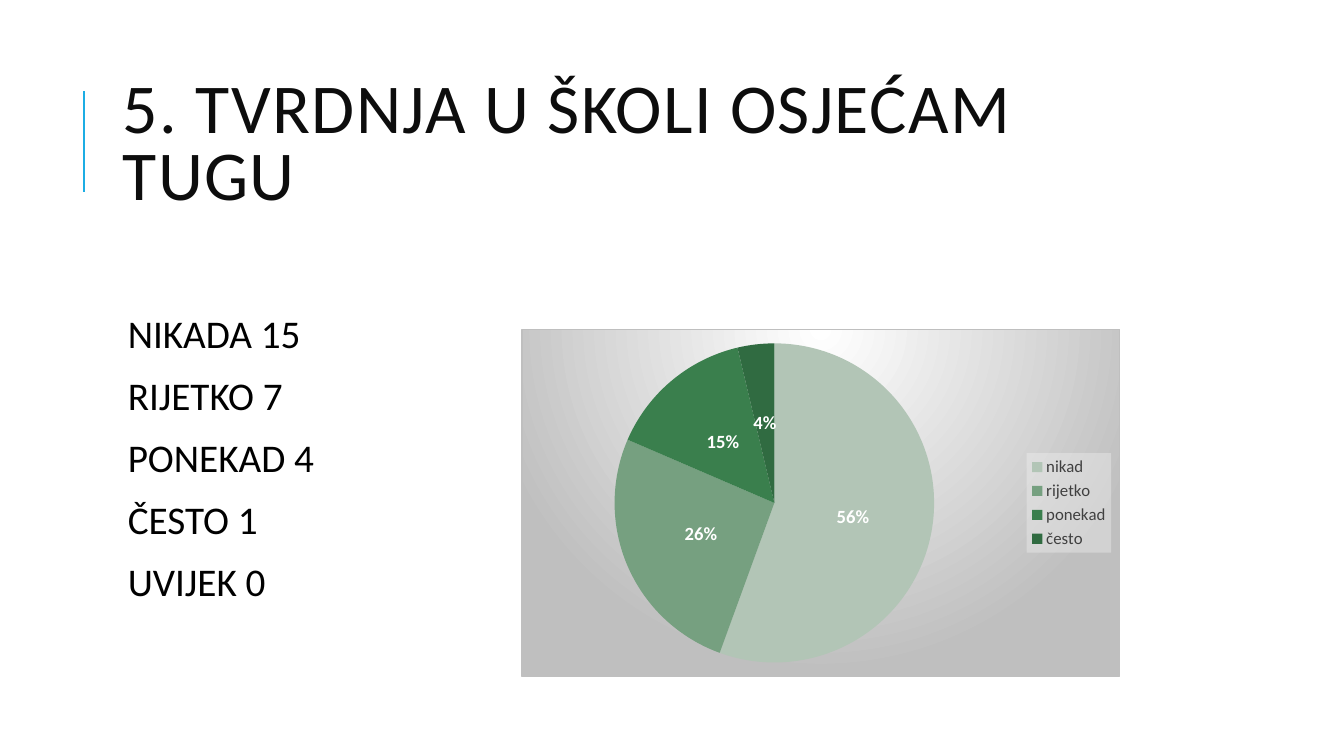
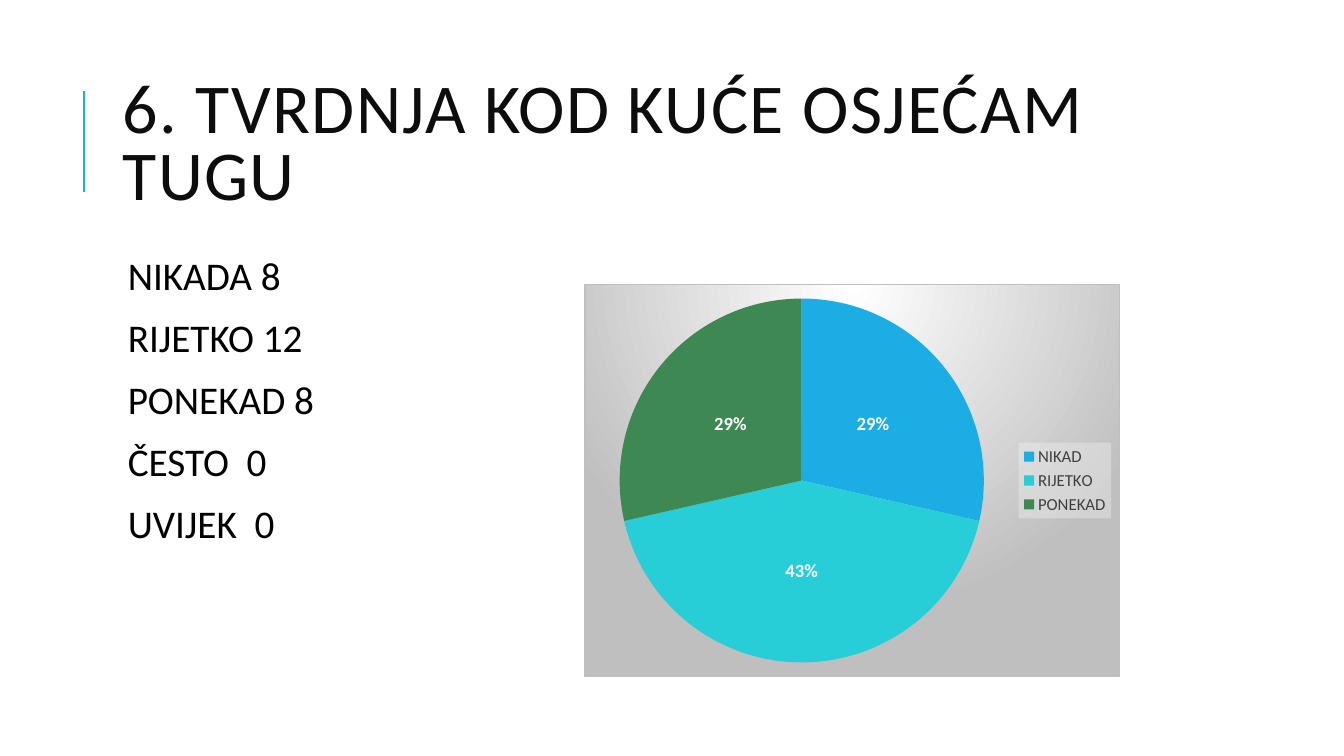
from lxml.etree import SubElement
from pptx import Presentation
from pptx.chart.data import CategoryChartData
from pptx.dml.color import RGBColor
from pptx.enum.chart import XL_CHART_TYPE, XL_LABEL_POSITION, XL_LEGEND_POSITION
from pptx.enum.shapes import MSO_CONNECTOR
from pptx.enum.text import MSO_ANCHOR, MSO_AUTO_SIZE, PP_ALIGN
from pptx.oxml import parse_xml
from pptx.oxml.ns import nsdecls, qn
from pptx.util import Pt

FONT = "Calibri"
ACCENT = "1CADE4"
TITLE_COLOR = "0D0D0D"
TEXT_COLOR = "000000"
LEGEND_COLOR = "404040"
LABEL_COLOR = "FFFFFF"
TITLE_BOX = (80.5, 46, 765.5, 118)
RULE_X, RULE_TOP, RULE_BOTTOM = 60, 65, 137

CHART_BACKGROUND = """<a:gradFill><a:gsLst>
<a:gs pos="0"><a:srgbClr val="FFFFFF"/></a:gs>
<a:gs pos="100000"><a:srgbClr val="BFBFBF"/></a:gs></a:gsLst>
<a:path path="circle"><a:fillToRect l="50000" t="0" r="50000" b="100000"/></a:path>
</a:gradFill><a:ln w="9525"><a:solidFill><a:srgbClr val="BFBFBF"/></a:solidFill></a:ln>"""
LEGEND_BACKGROUND = """<a:solidFill><a:srgbClr val="F2F2F2">
<a:alpha val="39000"/></a:srgbClr></a:solidFill><a:ln><a:noFill/></a:ln>"""

SLIDES = [
    {
        "title": "5. TVRDNJA U ŠKOLI OSJEĆAM TUGU",
        "answers": ["NIKADA 15", "RIJETKO 7", "PONEKAD 4", "ČESTO 1", "UVIJEK 0"],
        "answers_box": (80.5, 221, 280, 276),
        "chart_box": (372.5, 235, 427.5, 248.5),
        "slices": [
            ("nikad", 15, "B2C5B6"),
            ("rijetko", 7, "76A080"),
            ("ponekad", 4, "3A7F4D"),
            ("često", 1, "306B41"),
        ],
    },
    {
        "title": "6. TVRDNJA KOD KUĆE OSJEĆAM TUGU",
        "answers": ["NIKADA 8", "RIJETKO 12", "PONEKAD 8", "ČESTO  0", "UVIJEK  0"],
        "answers_box": (80.5, 180, 280, 317),
        "chart_box": (417.5, 203, 382.5, 280.5),
        "slices": [
            ("NIKAD", 8, ACCENT),
            ("RIJETKO", 12, "27CED7"),
            ("PONEKAD", 8, "3E8853"),
        ],
    },
]


def color(value):
    """Turn a hex string into a colour."""
    return RGBColor.from_string(value)


def points(box):
    """Turn a box of numbers into lengths in points."""
    return [Pt(length) for length in box]


def style_font(font, size, value, bold=False):
    """Set the typeface, size, colour and weight of a font."""
    font.name = FONT
    font.size = Pt(size)
    font.bold = bold
    font.color.rgb = color(value)


def add_title(slide, text, box):
    """Fill and format the title placeholder."""
    title = slide.shapes.title
    title.left, title.top, title.width, title.height = points(box)
    frame = title.text_frame
    frame.text = text
    frame.word_wrap = True
    frame.auto_size = MSO_AUTO_SIZE.NONE
    frame.vertical_anchor = MSO_ANCHOR.MIDDLE
    paragraph = frame.paragraphs[0]
    paragraph.alignment = PP_ALIGN.LEFT
    paragraph.line_spacing = 0.8
    run = paragraph.runs[0]
    style_font(run.font, 50, TITLE_COLOR)
    run.font._element.set("spc", "100")


def add_rule(slide):
    """Draw the accent line beside the title."""
    rule = slide.shapes.add_connector(
        MSO_CONNECTOR.STRAIGHT, Pt(RULE_X), Pt(RULE_BOTTOM), Pt(RULE_X), Pt(RULE_TOP)
    )
    rule.line.color.rgb = color(ACCENT)
    rule.line.width = Pt(1.5)
    SubElement(rule._element.spPr, qn("a:effectLst"))


def add_answers(slide, answers, box):
    """List the answer counts, one paragraph each."""
    frame = slide.shapes.add_textbox(*points(box)).text_frame
    frame.word_wrap = True
    frame.margin_left = Pt(10.8)
    frame.margin_top = frame.margin_right = frame.margin_bottom = Pt(3.6)
    frame.text = "\n".join(answers)
    for paragraph in frame.paragraphs:
        paragraph.line_spacing = 0.9
        paragraph.space_before = Pt(12)
        paragraph.space_after = Pt(2)
        style_font(paragraph.runs[0].font, 28, TEXT_COLOR)


def set_background(element, fill):
    """Give a chart element a fill and line, ahead of its text properties."""
    properties = parse_xml(f'<c:spPr {nsdecls("c", "a")}>{fill}</c:spPr>')
    element.find(qn("c:txPr")).addprevious(properties)


def add_pie(slide, slices, box):
    """Add a pie chart with percentages and a legend on the right."""
    names, counts, fills = zip(*slices)
    data = CategoryChartData()
    data.categories = names
    data.add_series("Series 1", counts)
    chart = slide.shapes.add_chart(XL_CHART_TYPE.PIE, *points(box), data).chart
    chart.has_title = False
    style_font(chart.font, 10, TEXT_COLOR)
    set_background(chart._chartSpace, CHART_BACKGROUND)

    chart.has_legend = True
    chart.legend.position = XL_LEGEND_POSITION.RIGHT
    chart.legend.include_in_layout = False
    style_font(chart.legend.font, 12, LEGEND_COLOR)
    set_background(chart.legend._element, LEGEND_BACKGROUND)

    plot = chart.plots[0]
    plot.vary_by_categories = True
    for index, fill in enumerate(fills):
        point_fill = plot.series[0].points[index].format.fill
        point_fill.solid()
        point_fill.fore_color.rgb = color(fill)

    plot.has_data_labels = True
    labels = plot.data_labels
    labels.show_percentage = True
    labels.show_value = False
    labels.number_format = "0%"
    labels.number_format_is_linked = False
    labels.position = XL_LABEL_POSITION.CENTER
    style_font(labels.font, 13.3, LABEL_COLOR, bold=True)


def add_statement_slide(presentation, content):
    """Build a slide with a statement, its answer counts and their pie."""
    slide = presentation.slides.add_slide(presentation.slide_layouts[5])
    add_rule(slide)
    add_title(slide, content["title"], TITLE_BOX)
    add_answers(slide, content["answers"], content["answers_box"])
    add_pie(slide, content["slices"], content["chart_box"])


def main():
    """Build and save the presentation."""
    presentation = Presentation()
    presentation.slide_width = Pt(960)
    presentation.slide_height = Pt(540)
    for content in SLIDES:
        add_statement_slide(presentation, content)
    presentation.save("out.pptx")


if __name__ == "__main__":
    main()
